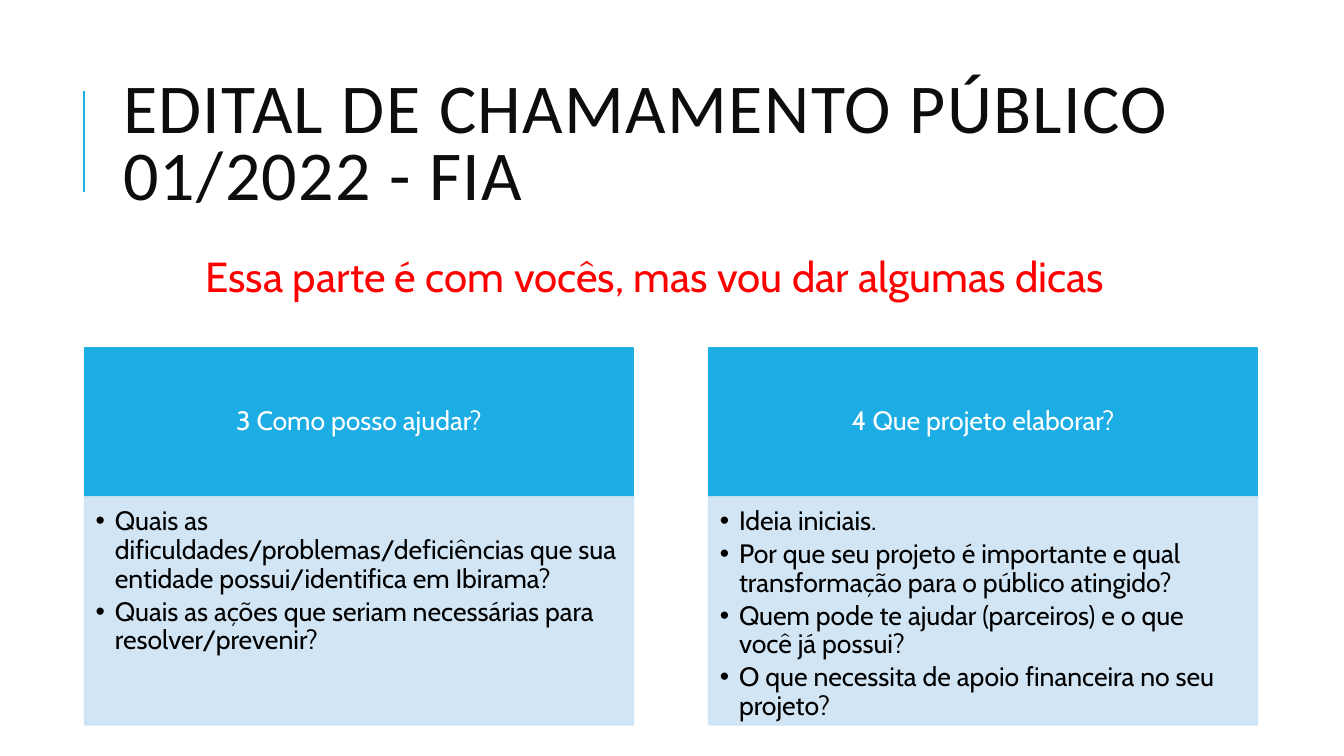
from lxml import etree
from pptx import Presentation, util as u
from pptx.dml.color import RGBColor
from pptx.enum import shapes, text
from pptx.oxml.ns import qn

# Content
TITLE = "EDITAL DE CHAMAMENTO PÚBLICO 01/2022 - FIA"
HINT = "Essa parte é com vocês, mas vou dar algumas dicas"
TOPICS = [
    ("3 Como posso ajudar?", [
        "Quais as dificuldades/problemas/deficiências que sua entidade possui/identifica em Ibirama?",
        "Quais as ações que seriam necessárias para resolver/prevenir?",
    ]),
    ("4 Que projeto elaborar?", [
        "Ideia iniciais.",
        "Por que seu projeto é importante e qual transformação para o público atingido?",
        "Quem pode te ajudar (parceiros) e o que você já possui?",
        "O que necessita de apoio financeira no seu projeto?",
    ]),
]
COLORS = {"accent": "1CADE4", "pale": "CDE3F5", "title": "0D0D0D",
          "hint": "FF0000", "head": "FFFFFF", "body": "000000"}

# Grid, in inches
LEFT, COLUMN, GAP = 0.84, 5.44, 0.75
TOP, HEAD, BODY = 3.45, 1.48, 2.26
INDENT = 0.19


def rgb(name):
    return RGBColor.from_string(COLORS[name])


def inches(*lengths):
    return [u.Inches(length) for length in lengths]


def set_frame(frame, anchor, insets=(0.1, 0.05, 0.1, 0.05)):
    frame.word_wrap = True
    frame.vertical_anchor = anchor
    (frame.margin_left, frame.margin_top,
     frame.margin_right, frame.margin_bottom) = inches(*insets)


def style(paragraph, font, size, color, align=text.PP_ALIGN.LEFT, spacing=1.0, after=0):
    paragraph.alignment = align
    paragraph.line_spacing = spacing
    paragraph.space_before = u.Pt(0)
    paragraph.space_after = u.Pt(after)
    for run in paragraph.runs:
        run.font.name = font
        run.font.size = u.Pt(size)
        run.font.color.rgb = rgb(color)


def add_bullet(paragraph):
    props = paragraph._p.get_or_add_pPr()
    props.set("marL", str(u.Inches(INDENT)))
    props.set("indent", str(-u.Inches(INDENT)))
    etree.SubElement(props, qn("a:buFont")).set("typeface", "Arial")
    etree.SubElement(props, qn("a:buChar")).set("char", "•")


def add_panel(slide, box, color, opacity=100):
    panel = slide.shapes.add_shape(shapes.MSO_SHAPE.RECTANGLE, *inches(*box))
    panel.shadow.inherit = False
    panel.fill.solid()
    panel.fill.fore_color.rgb = rgb(color)
    panel.line.color.rgb = rgb(color)
    panel.line.width = u.Pt(1.25)
    if opacity < 100:
        for tone in panel._element.spPr.iter(qn("a:srgbClr")):
            etree.SubElement(tone, qn("a:alpha")).set("val", str(opacity * 1000))
    return panel


def add_topic(slide, left, heading, questions):
    head = add_panel(slide, (left, TOP, COLUMN, HEAD), "accent").text_frame
    set_frame(head, text.MSO_ANCHOR.MIDDLE, (0.15, 0.08, 0.15, 0.08))
    head.text = heading
    style(head.paragraphs[0], "Cabin", 19, "head", text.PP_ALIGN.CENTER, 0.9)

    body = add_panel(slide, (left, TOP + HEAD, COLUMN, BODY), "pale", 90).text_frame
    set_frame(body, text.MSO_ANCHOR.TOP, (0.11, 0.11, 0.15, 0.17))
    body.text = "\n".join(questions)
    for question in body.paragraphs:
        style(question, "Cabin", 19, "body", spacing=0.9, after=2.85)
        add_bullet(question)


def main():
    prs = Presentation()
    prs.slide_width, prs.slide_height = inches(13.33, 7.5)
    slide = prs.slides.add_slide(prs.slide_layouts[5])

    # Title and the rule beside it
    title = slide.shapes.title
    title.left, title.top, title.width, title.height = inches(1.12, 0.64, 10.63, 1.64)
    set_frame(title.text_frame, text.MSO_ANCHOR.MIDDLE)
    title.text_frame.text = TITLE
    heading = title.text_frame.paragraphs[0]
    style(heading, "Calibri", 50, "title", spacing=0.8)
    heading.runs[0].font._element.set("spc", "100")

    rule = slide.shapes.add_connector(shapes.MSO_CONNECTOR.STRAIGHT,
                                      *inches(0.83, 1.9, 0.83, 0.9))
    rule.line.color.rgb = rgb("accent")
    rule.line.width = u.Pt(1.5)
    etree.SubElement(rule._element.spPr, qn("a:effectLst"))

    # Topic columns
    for column, (topic, questions) in enumerate(TOPICS):
        add_topic(slide, LEFT + column * (COLUMN + GAP), topic, questions)

    # Hint above the columns
    hint = slide.shapes.add_textbox(*inches(1.94, 2.44, 10.19, 0.61)).text_frame
    set_frame(hint, text.MSO_ANCHOR.TOP)
    hint.auto_size = text.MSO_AUTO_SIZE.SHAPE_TO_FIT_TEXT
    hint.text = HINT
    style(hint.paragraphs[0], "Cabin", 30, "hint")

    prs.save("out.pptx")


if __name__ == "__main__":
    main()
